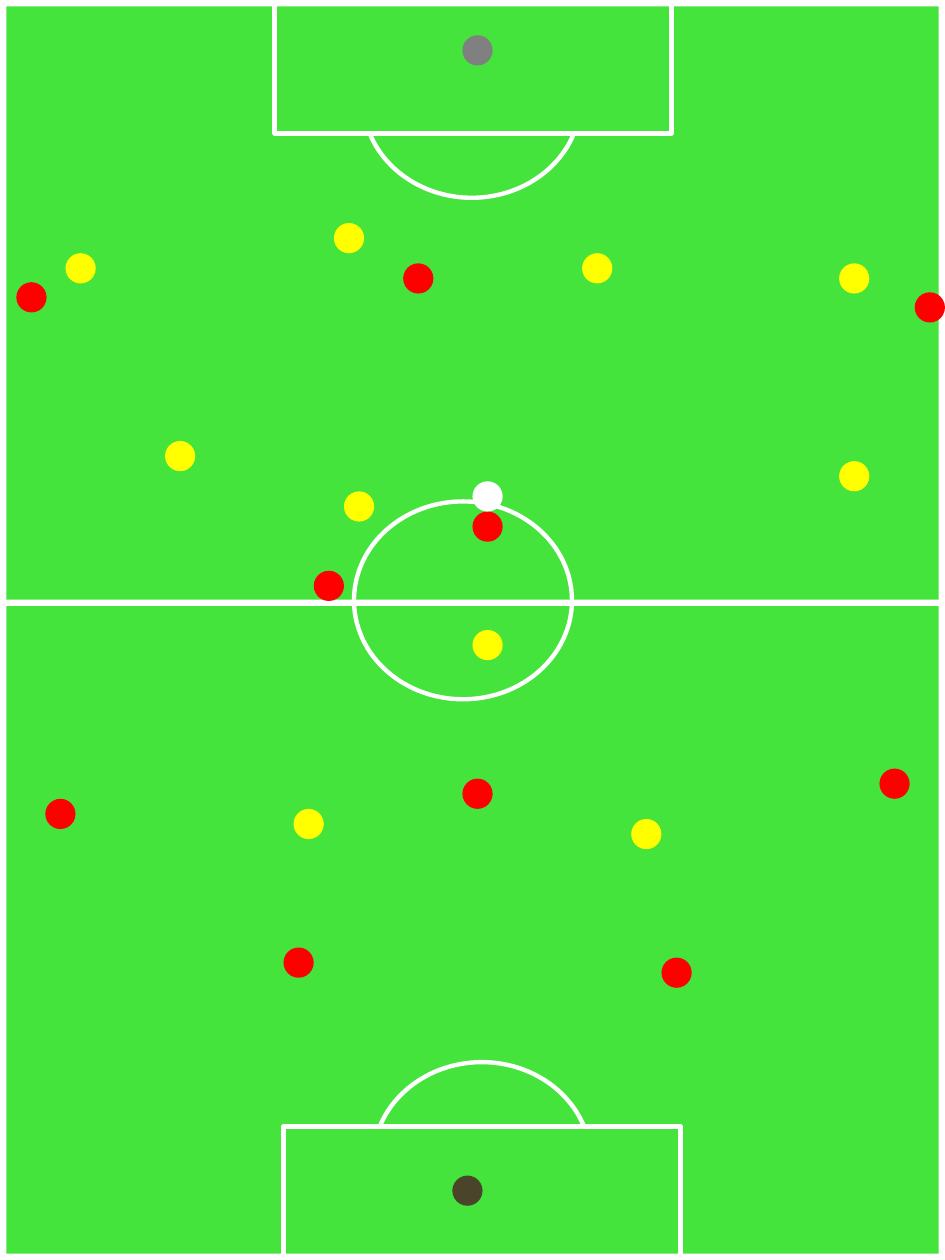
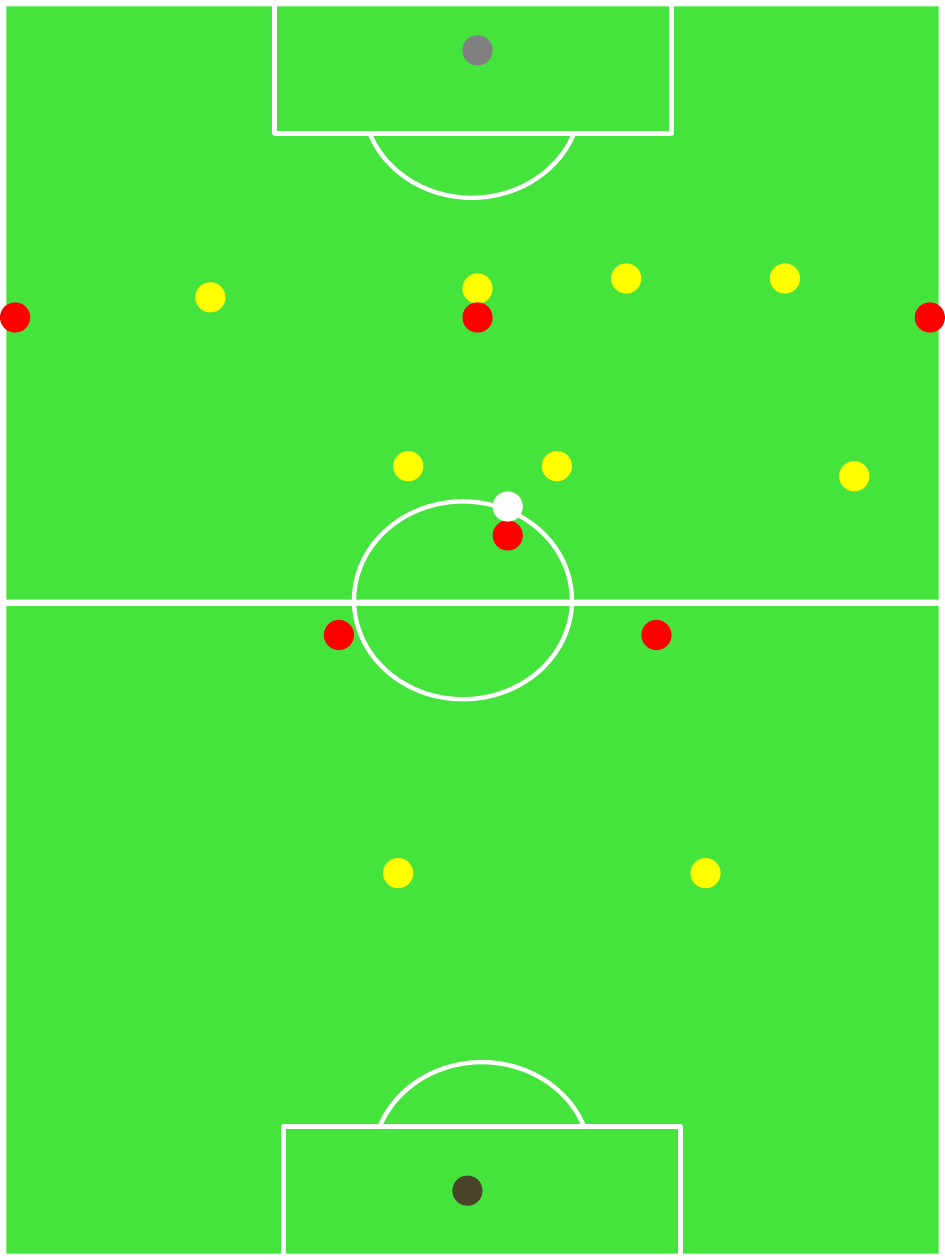
"""Build two football pitch diagrams with player positions."""
from dataclasses import dataclass

from pptx import Presentation
from pptx.dml.color import RGBColor
from pptx.enum.shapes import MSO_SHAPE
from pptx.shapes.autoshape import Shape
from pptx.slide import Slide
from pptx.util import Inches, Pt

RECTANGLE = MSO_SHAPE.RECTANGLE
OVAL = MSO_SHAPE.OVAL

COLOURS = {
    "grass": "44E43C",
    "white": "FFFFFF",
    "yellow": "FFFF00",
    "red": "FF0000",
    "bottom keeper": "4A452A",
    "top keeper": "808080",
}

PITCH_WIDTH, PITCH_HEIGHT = 7.5, 10
BAND = 0.05
MARKER_SIZE = 0.24
LINE_WIDTH = 2.5
CIRCLE_SIZE = (1.73, 1.57)
BOX_SIZE = (3.15, 1.06)


@dataclass(frozen=True)
class Marking:
    """One piece of the pitch, with lengths in inches."""

    kind: MSO_SHAPE
    left: float
    top: float
    width: float
    height: float
    fill: str | None = None
    line: str | None = None


@dataclass(frozen=True)
class Formation:
    """The positions of both teams and the ball."""

    yellow: tuple[tuple[float, float], ...]
    red: tuple[tuple[float, float], ...]
    ball: tuple[float, float]


def band(left: float, top: float, width: float, height: float) -> Marking:
    """Describe a solid white boundary or halfway line."""
    return Marking(RECTANGLE, left, top, width, height, fill="white")


def circle(left: float, top: float) -> Marking:
    """Describe an outlined pitch circle."""
    return Marking(OVAL, left, top, *CIRCLE_SIZE, line="white")


def penalty_box(left: float, top: float) -> Marking:
    """Describe a penalty box that covers part of its circle."""
    return Marking(RECTANGLE, left, top, *BOX_SIZE, fill="grass", line="white")


PITCH = (
    band(0, 0, BAND, PITCH_HEIGHT),
    band(PITCH_WIDTH - BAND, 0, BAND, PITCH_HEIGHT),
    band(0, 4.76, PITCH_WIDTH, BAND),
    circle(2.81, 3.98),
    circle(2.88, 0),
    circle(2.96, PITCH_HEIGHT - CIRCLE_SIZE[1]),
    penalty_box(2.25, PITCH_HEIGHT - BOX_SIZE[1]),
    band(0, PITCH_HEIGHT - BAND, PITCH_WIDTH, BAND),
    penalty_box(2.18, 0),
    band(0, 0, PITCH_WIDTH, BAND),
)

KEEPERS = {"bottom keeper": (3.59, 9.33), "top keeper": (3.67, 0.28)}

FORMATIONS = (
    Formation(
        yellow=(
            (0.52, 2.01), (2.65, 1.77), (6.66, 2.09), (4.62, 2.01), (1.31, 3.5),
            (3.75, 5), (2.73, 3.9), (6.66, 3.66), (2.33, 6.42), (5.01, 6.5),
        ),
        red=(
            (2.49, 4.53), (3.75, 4.06), (3.67, 6.18), (3.2, 2.09), (0.13, 2.24),
            (2.25, 7.52), (7.26, 2.32), (5.25, 7.6), (6.98, 6.1), (0.36, 6.34),
        ),
        ball=(3.75, 3.82),
    ),
    Formation(
        yellow=(
            (6.11, 2.09), (1.55, 2.24), (3.12, 3.58), (6.66, 3.66), (4.85, 2.09),
            (3.67, 2.17), (4.3, 3.58), (5.48, 6.81), (3.04, 6.81),
        ),
        red=(
            (3.91, 4.13), (7.26, 2.4), (5.09, 4.92),
            (2.57, 4.92), (3.67, 2.4), (0, 2.4),
        ),
        ball=(3.91, 3.9),
    ),
)


def colour(name: str) -> RGBColor:
    """Return a named colour."""
    return RGBColor.from_string(COLOURS[name])


def draw_marking(shapes, marking: Marking) -> Shape:
    """Draw one marking into a slide or group."""
    shape = shapes.add_shape(
        marking.kind,
        Inches(marking.left),
        Inches(marking.top),
        Inches(marking.width),
        Inches(marking.height),
    )
    shape.shadow.inherit = False
    if marking.fill:
        shape.fill.solid()
        shape.fill.fore_color.rgb = colour(marking.fill)
    else:
        shape.fill.background()
    if marking.line:
        shape.line.color.rgb = colour(marking.line)
        shape.line.width = Pt(LINE_WIDTH)
    else:
        shape.line.fill.background()
    return shape


def draw_pitch(slide: Slide) -> None:
    """Draw the pitch markings as one group."""
    group = slide.shapes.add_group_shape()
    for marking in PITCH:
        draw_marking(group.shapes, marking)


def draw_marker(slide: Slide, position: tuple[float, float], fill: str) -> None:
    """Draw a player or the ball."""
    marker = Marking(OVAL, *position, MARKER_SIZE, MARKER_SIZE, fill=fill)
    draw_marking(slide.shapes, marker)


def draw_formation(slide: Slide, formation: Formation) -> None:
    """Draw both teams, their keepers and the ball."""
    for team, positions in (("yellow", formation.yellow), ("red", formation.red)):
        for position in positions:
            draw_marker(slide, position, team)
    for keeper, position in KEEPERS.items():
        draw_marker(slide, position, keeper)
    draw_marker(slide, formation.ball, "white")


def main() -> None:
    """Build and save the presentation."""
    presentation = Presentation()
    presentation.slide_width = Inches(PITCH_WIDTH)
    presentation.slide_height = Inches(PITCH_HEIGHT)
    background = presentation.slide_master.background.fill
    background.solid()
    background.fore_color.rgb = colour("grass")
    blank_layout = presentation.slide_layouts[6]
    for formation in FORMATIONS:
        slide = presentation.slides.add_slide(blank_layout)
        draw_pitch(slide)
        draw_formation(slide, formation)
    presentation.save("out.pptx")


if __name__ == "__main__":
    main()
